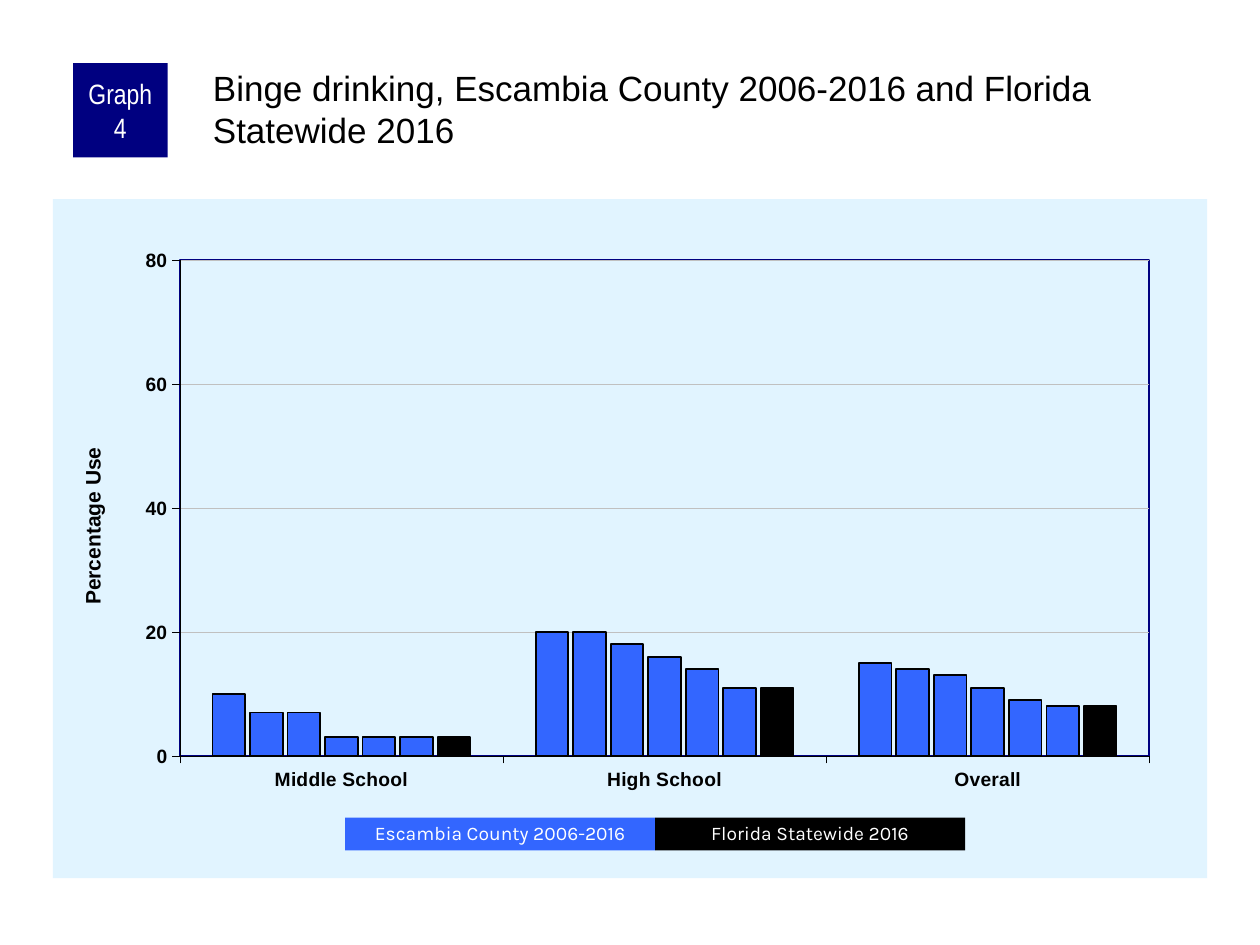
import pptx
import pptx.util
import pptx.chart.data
import pptx.dml.color
import pptx.enum.chart
import pptx.enum.shapes
import pptx.enum.text
import pptx.oxml

Inches, Pt = pptx.util.Inches, pptx.util.Pt
RGB = pptx.dml.color.RGBColor
BLACK = RGB(0, 0, 0)
WHITE = RGB(0xFF, 0xFF, 0xFF)
NAVY = RGB(0, 0, 0x80)
BLUE = RGB(0x33, 0x66, 0xFF)
PALE = RGB(0xE1, 0xF4, 0xFF)
GREY = RGB(0xC0, 0xC0, 0xC0)
NS = ('xmlns:c="http://schemas.openxmlformats.org/drawingml/2006/chart" '
      'xmlns:a="http://schemas.openxmlformats.org/drawingml/2006/main"')

deck = pptx.Presentation()
deck.slide_width, deck.slide_height = Inches(10), Inches(7.5)
slide = deck.slides.add_slide(deck.slide_layouts[6])


def add_text(text, box, size, font, color, fill=None, inset=(0.1, 0.05, 0.1, 0.05),
             space=None):
    """Add a centred filled box, or a plain top-left text box without a fill."""
    place = [Inches(n) for n in box]
    if fill is None:
        shape = slide.shapes.add_textbox(*place)
    else:
        shape = slide.shapes.add_shape(pptx.enum.shapes.MSO_SHAPE.RECTANGLE, *place)
        shape.shadow.inherit = False
        shape.fill.solid()
        shape.fill.fore_color.rgb = fill
        shape.line.fill.background()
    frame = shape.text_frame
    frame.word_wrap = True
    frame.margin_left, frame.margin_top, frame.margin_right, frame.margin_bottom = (
        Inches(n) for n in inset)
    para = frame.paragraphs[0]
    if fill is not None:
        frame.vertical_anchor = pptx.enum.text.MSO_ANCHOR.MIDDLE
        para.alignment = pptx.enum.text.PP_ALIGN.CENTER
    para.line_spacing = space
    run = para.add_run()
    run.text = text
    run.font.size, run.font.name = Pt(size), font
    run.font.color.rgb = color


def set_layout(node, index, marks):
    """Give a chart part a manual layout as its child at the index."""
    for old in node.findall("{*}layout"):
        node.remove(old)
    body = "".join(f'<c:{tag} val="{val}"/>' for tag, val in marks.items())
    node.insert(index, pptx.oxml.parse_xml(
        f"<c:layout {NS}><c:manualLayout>{body}</c:manualLayout></c:layout>"))


# Chart
data = pptx.chart.data.CategoryChartData()
data.categories = ["Middle School", "High School", "Overall"]
rows = [(10, 20, 15), (7, 20, 14), (7, 18, 13), (3, 16, 11),
        (3, 14, 9), (3, 11, 8), (3, 11, 8)]
for num, row in enumerate(rows, 1):
    data.add_series(f"Series {num}", row)
chart = slide.shapes.add_chart(
    pptx.enum.chart.XL_CHART_TYPE.COLUMN_CLUSTERED,
    Inches(0.42), Inches(1.58), Inches(9.16), Inches(5.39), data).chart
chart.has_legend = chart.has_title = False
chart.font.size, chart.font.name = Pt(8), "Arial"
chart.font.color.rgb = BLACK

plot = chart.plots[0]
plot.gap_width, plot.overlap = 200, -15
plot.vary_by_categories = False
for num, bar in enumerate(plot.series, 1):
    bar.format.fill.solid()
    bar.format.fill.fore_color.rgb = BLACK if num == len(rows) else BLUE
    bar.format.line.color.rgb = BLACK
    bar.format.line.width = Pt(1)

for axis in (chart.category_axis, chart.value_axis):
    axis.major_tick_mark = pptx.enum.chart.XL_TICK_MARK.OUTSIDE
    axis.minor_tick_mark = pptx.enum.chart.XL_TICK_MARK.NONE
    font = axis.tick_labels.font
    font.size, font.name, font.bold = Pt(11), "Arial", True
    font.color.rgb = BLACK
    axis.format.line.color.rgb = BLACK
    axis.format.line.width = Pt(0.25)

scale = chart.value_axis
scale.minimum_scale, scale.maximum_scale, scale.major_unit = 0, 80, 20
scale.tick_labels.number_format = "0"
scale.tick_labels.number_format_is_linked = False
scale.major_gridlines.format.line.color.rgb = GREY
scale.major_gridlines.format.line.width = Pt(0.25)
title = scale.axis_title
title.text_frame.text = "Percentage Use"
font = title.text_frame.paragraphs[0].runs[0].font
font.size, font.name, font.bold = Pt(12), "Arial", True
font.color.rgb = BLACK
title.element.find(".//{*}bodyPr").set("rot", "-5400000")
title.element.find(".//{*}bodyPr").set("vert", "horz")
set_layout(title.element, 1, {"xMode": "edge", "yMode": "edge", "x": 0.02, "y": 0.36})

# Chart background and plot frame
area = chart.element.find(".//{*}plotArea")
set_layout(area, 0, {"layoutTarget": "inner", "xMode": "edge", "yMode": "edge",
                     "x": 0.11, "y": 0.09, "w": 0.84, "h": 0.73})
area.append(pptx.oxml.parse_xml(
    f'<c:spPr {NS}><a:noFill/><a:ln w="12700"><a:solidFill>'
    f'<a:srgbClr val="{NAVY}"/></a:solidFill></a:ln></c:spPr>'))
chart.element.find("{*}chart").addnext(pptx.oxml.parse_xml(
    f'<c:spPr {NS}><a:solidFill><a:srgbClr val="{PALE}"/></a:solidFill>'
    '<a:ln><a:noFill/></a:ln></c:spPr>'))

# Heading
add_text("Graph 4", (0.58, 0.5, 0.75, 0.75), 16, "Arial Narrow", WHITE,
         fill=NAVY, inset=(0.05, 0, 0.05, 0))
add_text("Binge drinking, Escambia County 2006-2016 and Florida Statewide 2016",
         (1.66, 0.5, 7.92, 0.83), 20, "Arial", BLACK, inset=(0.03, 0.03, 0, 0))

# Legend
keys = [("Escambia County 2006-2016", BLUE), ("Florida Statewide 2016", BLACK)]
for num, (text, fill) in enumerate(keys):
    add_text(text, (2.74 + 2.46 * num, 6.49, 2.46, 0.26), 11, "Karla", WHITE,
             fill=fill, space=0.9)

deck.save("out.pptx")
